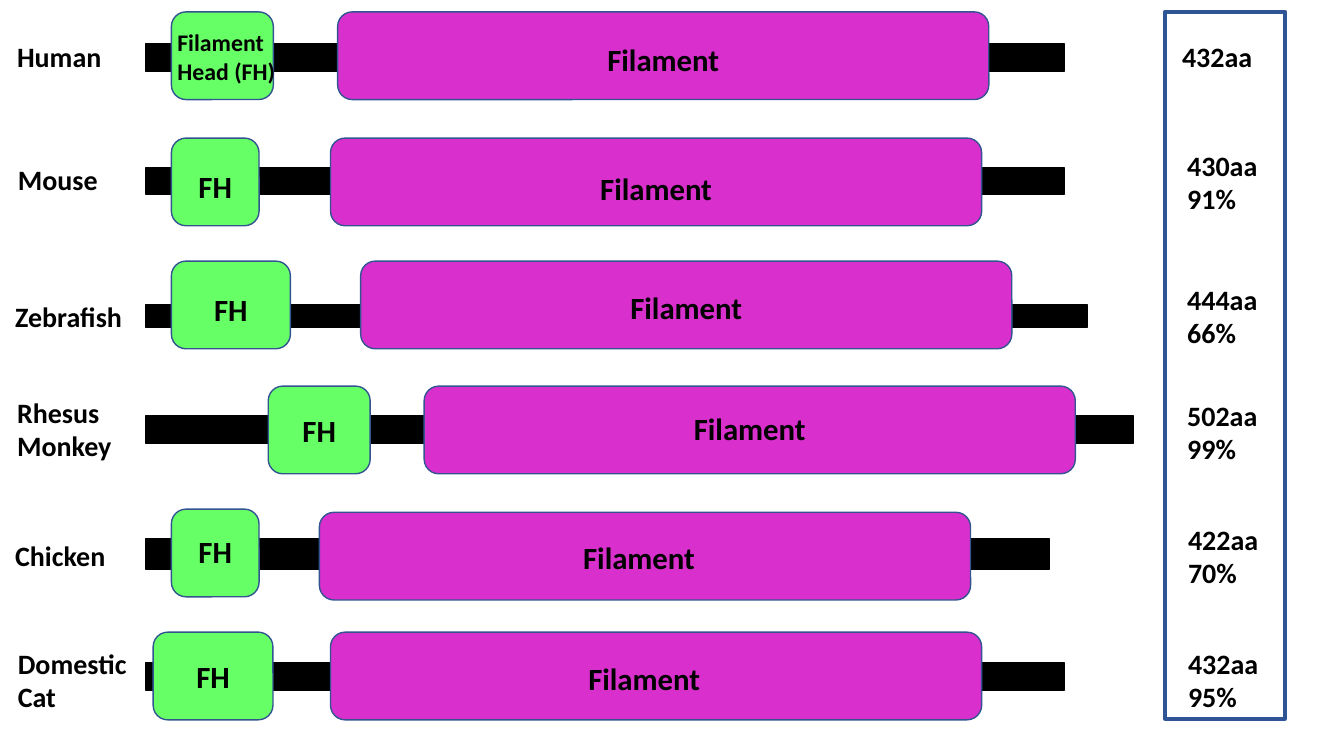
from dataclasses import dataclass

import pptx
import pptx.dml.color
import pptx.enum.shapes
import pptx.enum.text
import pptx.util

Cm = pptx.util.Cm
Shapes = pptx.enum.shapes.MSO_SHAPE
Align = pptx.enum.text.PP_ALIGN


@dataclass(frozen=True)
class Theme:
    font: str = "Calibri"
    ink: str = "000000"
    head: str = "66FF66"
    filament: str = "D92FCD"
    outline: str = "325491"
    frame: str = "2F5597"
    small: int = 17
    body: int = 20
    domain: int = 22


THEME = Theme()

# Lengths in cm, shared by every protein row
ROW_HEIGHT = 2.21
BACKBONE_LEFT = 3.68
FILAMENT_WIDTH = 16.41
FILAMENT_LABEL_WIDTH = 11.86
HEAD_LABEL_WIDTH = 2.21
DOMAIN_LABEL_HEIGHT = 1.19
NAME_WIDTH = 3.66
VALUE_WIDTH = 3.58
LINE_HEIGHTS = {1: 1.12, 2: 1.96}


@dataclass
class Protein:
    """One row: lefts are on the slide, tops are relative to the row."""
    top: float
    name: str
    name_at: tuple        # left, top
    name_lines: int
    values: list
    values_at: tuple      # left, top
    backbone: tuple       # top, width, height
    head: tuple           # left, width
    head_label_top: float
    filament: tuple       # left, top
    filament_label: tuple  # shift from the centre, top
    head_text: str = "FH"


PROTEINS = [
    Protein(0.3, "Human", (0.18, 0.58), 1, ["432aa"], (29.54, 0.58),
            (0.79, 23.14, 0.71), (4.32, 2.57), 0.28, (8.51, 0), (0, 0.61),
            "Filament Head (FH)"),
    Protein(3.48, "Mouse", (0.2, 0.48), 1, ["430aa", "91%"], (29.67, 0.13),
            (0.74, 23.14, 0.69), (4.32, 2.21), 0.61, (8.33, 0), (0, 0.66)),
    Protein(6.58, "Zebrafish", (0.13, 0.84), 1, ["444aa", "66%"], (29.67, 0.41),
            (1.09, 23.72, 0.58), (4.32, 3.0), 0.61, (9.09, 0), (0, 0.58)),
    Protein(9.73, "Rhesus Monkey", (0.18, 0.1), 2, ["502aa", "99%"], (29.67, 0.18),
            (0.74, 24.87, 0.71), (6.76, 2.57), 0.53, (10.69, 0), (0, 0.46)),
    Protein(12.83, "Chicken", (0.13, 0.61), 1, ["422aa", "70%"], (29.69, 0.2),
            (0.74, 22.76, 0.79), (4.32, 2.21), 0.48, (8.05, 0.08), (-0.15, 0.61)),
    Protein(15.93, "Domestic Cat", (0.2, 0.23), 2, ["432aa", "95%"], (29.69, 0.23),
            (0.76, 23.14, 0.71), (3.86, 3.02), 0.53, (8.33, 0), (-0.3, 0.58)),
]


def color(value):
    return pptx.dml.color.RGBColor.from_string(value)


def add_block(page, kind, box, fill, line, weight=1):
    block = page.shapes.add_shape(kind, *map(Cm, box))
    block.shadow.inherit = False
    if fill:
        block.fill.solid()
        block.fill.fore_color.rgb = color(fill)
    else:
        block.fill.background()
    block.line.color.rgb = color(line)
    block.line.width = pptx.util.Pt(weight)


def add_label(page, box, lines, size, align=Align.LEFT):
    frame = page.shapes.add_textbox(*map(Cm, box)).text_frame
    frame.word_wrap = True
    frame.text = "\n".join(lines)
    for para in frame.paragraphs:
        para.alignment = align
        para.font.name = THEME.font
        para.font.size = pptx.util.Pt(size)
        para.font.bold = True
        para.font.color.rgb = color(THEME.ink)


def add_protein(page, protein, left, top):
    # Backbone
    offset, width, height = protein.backbone
    add_block(page, Shapes.RECTANGLE,
              (left + BACKBONE_LEFT, top + offset, width, height),
              THEME.ink, THEME.ink)

    # Head domain
    head_left, head_width = protein.head
    head_left += left
    add_block(page, Shapes.ROUNDED_RECTANGLE,
              (head_left, top, head_width, ROW_HEIGHT), THEME.head, THEME.outline)
    label_top = top + protein.head_label_top
    if protein.head_text == "FH":
        label_left = head_left + (head_width - HEAD_LABEL_WIDTH) / 2
        add_label(page, (label_left, label_top, HEAD_LABEL_WIDTH, DOMAIN_LABEL_HEIGHT),
                  [protein.head_text], THEME.domain, Align.CENTER)
    else:
        add_label(page, (head_left - 0.1, label_top, 3.23, 1.7),
                  [protein.head_text], THEME.small)

    # Filament domain
    filament_left, offset = protein.filament
    filament_left += left
    add_block(page, Shapes.ROUNDED_RECTANGLE,
              (filament_left, top + offset, FILAMENT_WIDTH, ROW_HEIGHT),
              THEME.filament, THEME.outline)
    shift, offset = protein.filament_label
    label_left = filament_left + (FILAMENT_WIDTH - FILAMENT_LABEL_WIDTH) / 2 + shift
    add_label(page, (label_left, top + offset, FILAMENT_LABEL_WIDTH, DOMAIN_LABEL_HEIGHT),
              ["Filament"], THEME.domain, Align.CENTER)

    # Species name, then length and identity
    for lines, place, width, count in (
            ([protein.name], protein.name_at, NAME_WIDTH, protein.name_lines),
            (protein.values, protein.values_at, VALUE_WIDTH, len(protein.values))):
        add_label(page, (left + place[0], top + place[1], width, LINE_HEIGHTS[count]),
                  lines, THEME.body)


def add_values_frame(page, box):
    add_block(page, Shapes.RECTANGLE, box, None, THEME.frame, 3)


def main():
    deck = pptx.Presentation()
    deck.slide_width, deck.slide_height = Cm(33.87), Cm(19.05)
    page = deck.slides.add_slide(deck.slide_layouts[6])
    for protein in PROTEINS:
        add_protein(page, protein, 0, protein.top)
    add_values_frame(page, (29.36, 0.3, 3.02, 17.81))
    deck.save("out.pptx")


if __name__ == "__main__":
    main()
